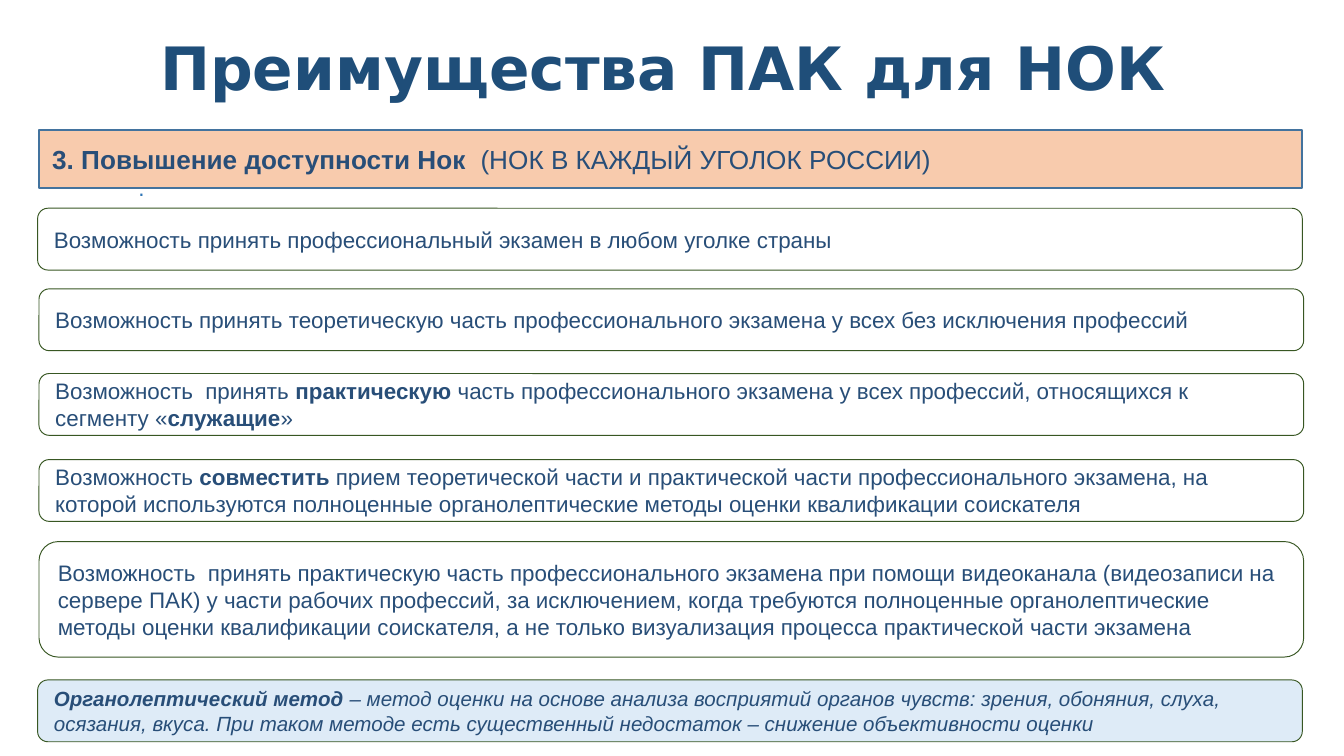
import pptx
import pptx.util
import pptx.dml.color
import pptx.enum.shapes
import pptx.enum.text

Inches = pptx.util.Inches
Pt = pptx.util.Pt
RGB = pptx.dml.color.RGBColor
SHAPE = pptx.enum.shapes.MSO_SHAPE
ALIGN = pptx.enum.text.PP_ALIGN
ANCHOR = pptx.enum.text.MSO_ANCHOR

NAVY = RGB(0x1F, 0x4E, 0x79)
INK = RGB(0x28, 0x4E, 0x78)
BLUE = RGB(0x2E, 0x75, 0xB6)
EDGE = RGB(0x43, 0x73, 0x9E)
GREEN = RGB(0x38, 0x57, 0x23)
PEACH = RGB(0xF8, 0xCB, 0xAD)
PALE = RGB(0xDE, 0xEB, 0xF7)
WHITE = RGB(0xFF, 0xFF, 0xFF)

WIDE = 9.41
LOW = 0.46

# Left, top, height and text parts; parts alternate plain and bold.
CARDS = [
    (0.28, 1.55, LOW, ["Возможность принять профессиональный экзамен в любом уголке страны"]),
    (0.29, 2.15, LOW, ["Возможность принять теоретическую часть профессионального экзамена "
                       "у всех без исключения профессий"]),
    (0.29, 2.78, LOW, ["Возможность  принять ", "практическую",
                       " часть профессионального экзамена у всех профессий, "
                       "относящихся к сегменту «", "служащие", "»"]),
    (0.29, 3.42, LOW, ["Возможность ", "совместить",
                       " прием теоретической части и практической части "
                       "профессионального экзамена, на которой используются "
                       "полноценные органолептические методы оценки "
                       "квалификации соискателя"]),
    (0.29, 4.03, 0.86, ["Возможность  принять практическую часть профессионального "
                        "экзамена при помощи видеоканала (видеозаписи на сервере ПАК) "
                        "у части рабочих профессий, за исключением, когда требуются "
                        "полноценные органолептические методы оценки квалификации "
                        "соискателя, а не только визуализация процесса практической "
                        "части экзамена"]),
]
HEAD = ["3. Повышение доступности Нок  ", "(НОК В КАЖДЫЙ УГОЛОК РОССИИ)"]
NOTE = ["Органолептический метод ",
        "– метод оценки на основе анализа восприятий органов чувств: зрения, "
        "обоняния, слуха, осязания, вкуса. При таком методе есть существенный "
        "недостаток – снижение объективности оценки"]


def write(frame, parts, size, color=INK, face="Arial", first=False):
    """Fill a frame with parts that switch bold on and off, from first."""
    frame.word_wrap = True
    para = frame.paragraphs[0]
    para.alignment = ALIGN.LEFT
    font = para.font
    font.name, font.size = face, Pt(size)
    font.color.rgb = color
    for i, part in enumerate(parts):
        run = para.add_run()
        run.text = part
        run.font.bold = first == (i % 2 == 0)
    return para


def add_text(slide, box, text, size, color, **style):
    shape = slide.shapes.add_textbox(*map(Inches, box))
    return shape.text_frame, write(shape.text_frame, [text], size, color, **style)


def add_box(slide, kind, box, fill, edge, width, parts, size, first=False):
    shape = slide.shapes.add_shape(kind, *map(Inches, box))
    shape.shadow.inherit = False
    shape.fill.solid()
    shape.fill.fore_color.rgb = fill
    shape.line.color.rgb = edge
    shape.line.width = Pt(width)
    shape.text_frame.vertical_anchor = ANCHOR.MIDDLE
    return write(shape.text_frame, parts, size, first=first)


def main():
    deck = pptx.Presentation()
    deck.slide_width = Inches(10)
    deck.slide_height = Inches(10 * 9 / 16)
    slide = deck.slides.add_slide(deck.slide_layouts[6])

    frame, title = add_text(slide, (0.5, 0.24, 8.87, 0.58), "Преимущества ПАК для НОК",
                            32, NAVY, face="DejaVu Sans", first=True)
    frame.vertical_anchor = ANCHOR.MIDDLE
    title.alignment = ALIGN.CENTER
    title.line_spacing = 0.9

    frame, _ = add_text(slide, (0.43, 1.25, 9.29, 0.3), ".", 12, BLUE)
    frame.margin_left = Inches(0.6)

    add_box(slide, SHAPE.RECTANGLE, (0.29, 0.97, 9.4, 0.43), PEACH, EDGE, 1,
            HEAD, 14, first=True)
    for left, top, high, parts in CARDS:
        add_box(slide, SHAPE.ROUNDED_RECTANGLE, (left, top, WIDE, high),
                WHITE, GREEN, 0.5, parts, 12)
    note = add_box(slide, SHAPE.ROUNDED_RECTANGLE, (0.28, 5.06, WIDE, LOW),
                   PALE, GREEN, 0.5, NOTE, 11, first=True)
    note.font.italic = True

    deck.save("out.pptx")


if __name__ == "__main__":
    main()
